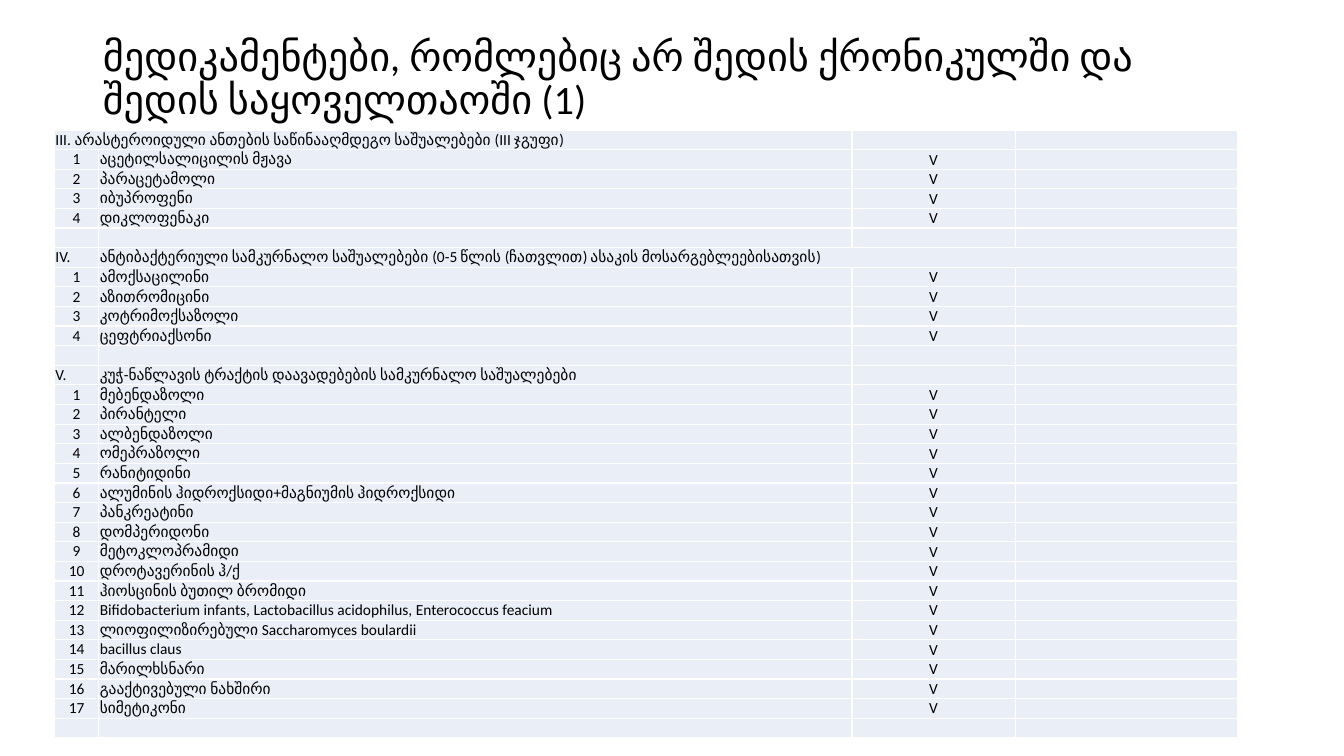
from dataclasses import dataclass

from lxml import etree
from pptx import Presentation
from pptx import util as u
from pptx.dml.color import RGBColor
from pptx.enum import text
from pptx.oxml import ns

PX = 9144


@dataclass(frozen=True)
class Theme:
    font: str = "Calibri"
    title_pt: float = 28.8
    cell_pt: int = 11
    border_pt: int = 1
    ink: str = "000000"
    cell_fill: str = "EAEFF7"
    border: str = "FFFFFF"


THEME = Theme()
LEFT, CENTER, JUSTIFY = (
    text.PP_ALIGN.LEFT, text.PP_ALIGN.CENTER, text.PP_ALIGN.JUSTIFY)
MIDDLE, BOTTOM = text.MSO_ANCHOR.MIDDLE, text.MSO_ANCHOR.BOTTOM

TITLE = "მედიკამენტები, რომლებიც არ შედის ქრონიკულში და შედის საყოველთაოში (1)"
COLUMNS = [44, 747, 162, 221]
SECTIONS = [
    (["III. არასტეროიდული ანთების საწინააღმდეგო საშუალებები (III ჯგუფი)"],
     (0, 1), JUSTIFY,
     ["აცეტილსალიცილის მჟავა", "პარაცეტამოლი", "იბუპროფენი", "დიკლოფენაკი"]),
    (["IV.", "ანტიბაქტერიული სამკურნალო საშუალებები "
      "(0-5 წლის (ჩათვლით) ასაკის მოსარგებლეებისათვის)"],
     (1, 3), LEFT,
     ["ამოქსაცილინი", "აზითრომიცინი", "კოტრიმოქსაზოლი", "ცეფტრიაქსონი"]),
    (["V.", "კუჭ-ნაწლავის ტრაქტის დაავადებების სამკურნალო საშუალებები"],
     None, LEFT,
     ["მებენდაზოლი", "პირანტელი", "ალბენდაზოლი", "ომეპრაზოლი", "რანიტიდინი",
      "ალუმინის ჰიდროქსიდი+მაგნიუმის ჰიდროქსიდი", "პანკრეატინი",
      "დომპერიდონი", "მეტოკლოპრამიდი", "დროტავერინის ჰ/ქ",
      "ჰიოსცინის ბუთილ ბრომიდი",
      "Bifidobacterium infants, Lactobacillus acidophilus, Enterococcus feacium",
      "ლიოფილიზირებული Saccharomyces boulardii", "bacillus claus",
      "მარილხსნარი", "გააქტივებული ნახშირი", "სიმეტიკონი"]),
]


def px(n):
    return u.Emu(n * PX)


def style_runs(p, size):
    for r in p.runs:
        r.font.name = THEME.font
        r.font.size = u.Pt(size)
        r.font.color.rgb = RGBColor.from_string(THEME.ink)


def add_title(slide):
    sp = slide.shapes.title
    sp.left, sp.top, sp.width, sp.height = map(px, (92, 40, 1150, 79))
    tf = sp.text_frame
    tf.text = TITLE
    tf.word_wrap = True
    tf.auto_size = text.MSO_AUTO_SIZE.NONE
    tf.vertical_anchor = MIDDLE
    p = tf.paragraphs[0]
    p.alignment = LEFT
    p.line_spacing = 0.9
    style_runs(p, THEME.title_pt)


def add_borders(cell):
    tc_pr = cell._tc.get_or_add_tcPr()
    for side in ("a:lnL", "a:lnR", "a:lnT", "a:lnB"):
        ln = etree.SubElement(tc_pr, ns.qn(side), w=str(u.Pt(THEME.border_pt)))
        fill = etree.SubElement(ln, ns.qn("a:solidFill"))
        etree.SubElement(fill, ns.qn("a:srgbClr"), val=THEME.border)


def format_cell(cell):
    add_borders(cell)
    cell.fill.solid()
    cell.fill.fore_color.rgb = RGBColor.from_string(THEME.cell_fill)
    cell.margin_left = cell.margin_right = px(1)
    cell.margin_top = cell.margin_bottom = 0
    etree.SubElement(cell.text_frame.paragraphs[0]._p, ns.qn("a:endParaRPr"),
                     sz=str(THEME.cell_pt * 100))


def write_cell(cell, words, align, anchor=MIDDLE):
    p = cell.text_frame.paragraphs[0]
    p.text = words
    p.alignment = align
    cell.vertical_anchor = anchor
    style_runs(p, THEME.cell_pt)


def write_section(table, top, section):
    heading, span, align, medicines = section
    for col, words in enumerate(heading):
        write_cell(table.cell(top, col), words, align)
    if span:
        first, last = span
        table.cell(top, first).merge(table.cell(top, last))
    for number, medicine in enumerate(medicines, 1):
        row = top + number
        write_cell(table.cell(row, 0), str(number), CENTER)
        write_cell(table.cell(row, 1), medicine, JUSTIFY)
        write_cell(table.cell(row, 2), "V", CENTER, BOTTOM)
    return top + len(medicines) + 2


def add_medicine_table(slide):
    row_count = sum(len(medicines) + 2 for *_, medicines in SECTIONS)
    frame = slide.shapes.add_table(
        row_count, len(COLUMNS), px(54), px(129), px(sum(COLUMNS)), px(603))
    table = frame.table
    table.first_row = table.horz_banding = False
    for column, width in zip(table.columns, COLUMNS):
        column.width = px(width)
    for cell in table.iter_cells():
        format_cell(cell)
    top = 0
    for section in SECTIONS:
        top = write_section(table, top, section)


def main():
    prs = Presentation()
    prs.slide_width, prs.slide_height = px(1333), px(750)
    slide = prs.slides.add_slide(prs.slide_layouts[5])
    add_title(slide)
    add_medicine_table(slide)
    prs.save("out.pptx")


if __name__ == "__main__":
    main()
